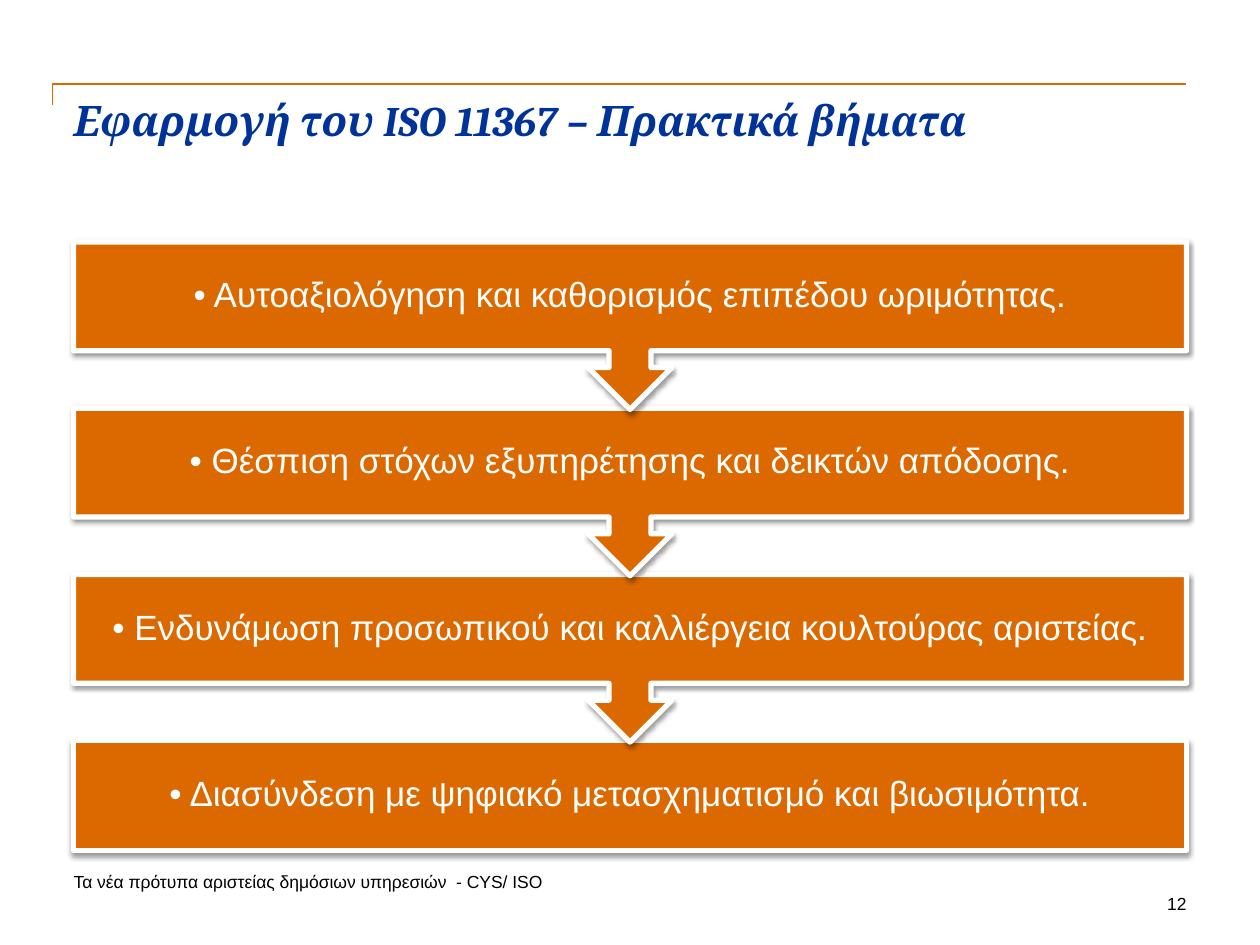
from lxml.etree import SubElement
from pptx import Presentation
from pptx.dml.color import RGBColor
from pptx.enum.shapes import MSO_SHAPE
from pptx.enum.text import MSO_ANCHOR, MSO_AUTO_SIZE, PP_ALIGN
from pptx.oxml.ns import qn
from pptx.util import Inches, Pt

ORANGE = RGBColor(0xDC, 0x69, 0x00)
BLUE = RGBColor(0x00, 0x33, 0x99)
WHITE = RGBColor(0xFF, 0xFF, 0xFF)
BLACK = RGBColor(0x00, 0x00, 0x00)

# The page grid has twelve cells to the inch
CELL = Inches(1) // 12
LEFT = 7 * CELL
WIDTH = 106 * CELL

STEPS = [
    "Αυτοαξιολόγηση και καθορισμός επιπέδου ωριμότητας.",
    "Θέσπιση στόχων εξυπηρέτησης και δεικτών απόδοσης.",
    "Ενδυνάμωση προσωπικού και καλλιέργεια κουλτούρας αριστείας.",
    "Διασύνδεση με ψηφιακό μετασχηματισμό και βιωσιμότητα.",
]
STEPS_TOP = Inches(1.92)
STEP_PITCH = Inches(1.32)
CALLOUT_HEIGHT = Inches(1.33)
BOX_HEIGHT = Inches(0.87)


def write_text(box, text, size=10, font="Arial", color=BLACK, bold=False, italic=False,
               align=PP_ALIGN.LEFT, anchor=MSO_ANCHOR.TOP, inset=0, spacing=1.0):
    frame = box.text_frame
    frame.word_wrap = True
    frame.auto_size = MSO_AUTO_SIZE.NONE
    frame.vertical_anchor = anchor
    frame.margin_left = frame.margin_right = inset
    frame.margin_top = frame.margin_bottom = inset
    para = frame.paragraphs[0]
    para.alignment = align
    para.line_spacing = spacing
    span = para.add_run()
    span.text = text
    span.font.size = Pt(size)
    span.font.name = font
    span.font.bold = bold
    span.font.italic = italic
    span.font.color.rgb = color


def add_soft_shadow(shape):
    shape.shadow.inherit = False
    effects = shape._element.spPr.find(qn("a:effectLst"))
    shadow = SubElement(effects, qn("a:outerShdw"), blurRad=str(Pt(3.1)),
                        dist=str(Pt(1.6)), dir="5400000", rotWithShape="0")
    color = SubElement(shadow, qn("a:srgbClr"), val="000000")
    SubElement(color, qn("a:alpha"), val="38000")


deck = Presentation()
deck.slide_width = Inches(10)
deck.slide_height = Inches(7.5)
page = deck.slides.add_slide(deck.slide_layouts[5])

# Corner rule above the title
outline = page.shapes.build_freeform(5 * CELL, 10 * CELL)
outline.add_line_segments([(5 * CELL, 8 * CELL), (113 * CELL, 8 * CELL)], close=False)
rule = outline.convert_to_shape()
rule.fill.background()
rule.line.color.rgb = ORANGE
rule.line.width = Pt(1)
rule.shadow.inherit = False

# Title
title = page.shapes.title
title.left, title.top, title.width, title.height = LEFT, 9 * CELL, WIDTH, 12 * CELL
write_text(title, "Εφαρμογή του ISO 11367 – Πρακτικά βήματα", size=24, font="Cambria",
           color=BLUE, bold=True, italic=True)

# Steps, drawn from the last up so that each arrow overlaps the next box
last = len(STEPS) - 1
for row in range(last, -1, -1):
    kind, height = MSO_SHAPE.DOWN_ARROW_CALLOUT, CALLOUT_HEIGHT
    if row == last:
        kind, height = MSO_SHAPE.RECTANGLE, BOX_HEIGHT
    box = page.shapes.add_shape(kind, LEFT, STEPS_TOP + row * STEP_PITCH, WIDTH, height)
    box.fill.solid()
    box.fill.fore_color.rgb = ORANGE
    box.line.color.rgb = WHITE
    box.line.width = Pt(3)
    add_soft_shadow(box)
    write_text(box, "• " + STEPS[row], size=20, color=WHITE, align=PP_ALIGN.CENTER,
               anchor=MSO_ANCHOR.MIDDLE, inset=Inches(0.16), spacing=0.9)

# Footer and page number
footer = page.shapes.add_textbox(LEFT, 83 * CELL, 69 * CELL, 2 * CELL)
write_text(footer, "Τα νέα πρότυπα αριστείας δημόσιων υπηρεσιών  - CYS/ ISO",
           anchor=MSO_ANCHOR.BOTTOM)
number = page.shapes.add_textbox(93 * CELL, 85 * CELL, 20 * CELL, 2 * CELL)
write_text(number, "12", align=PP_ALIGN.RIGHT)

deck.save("out.pptx")
